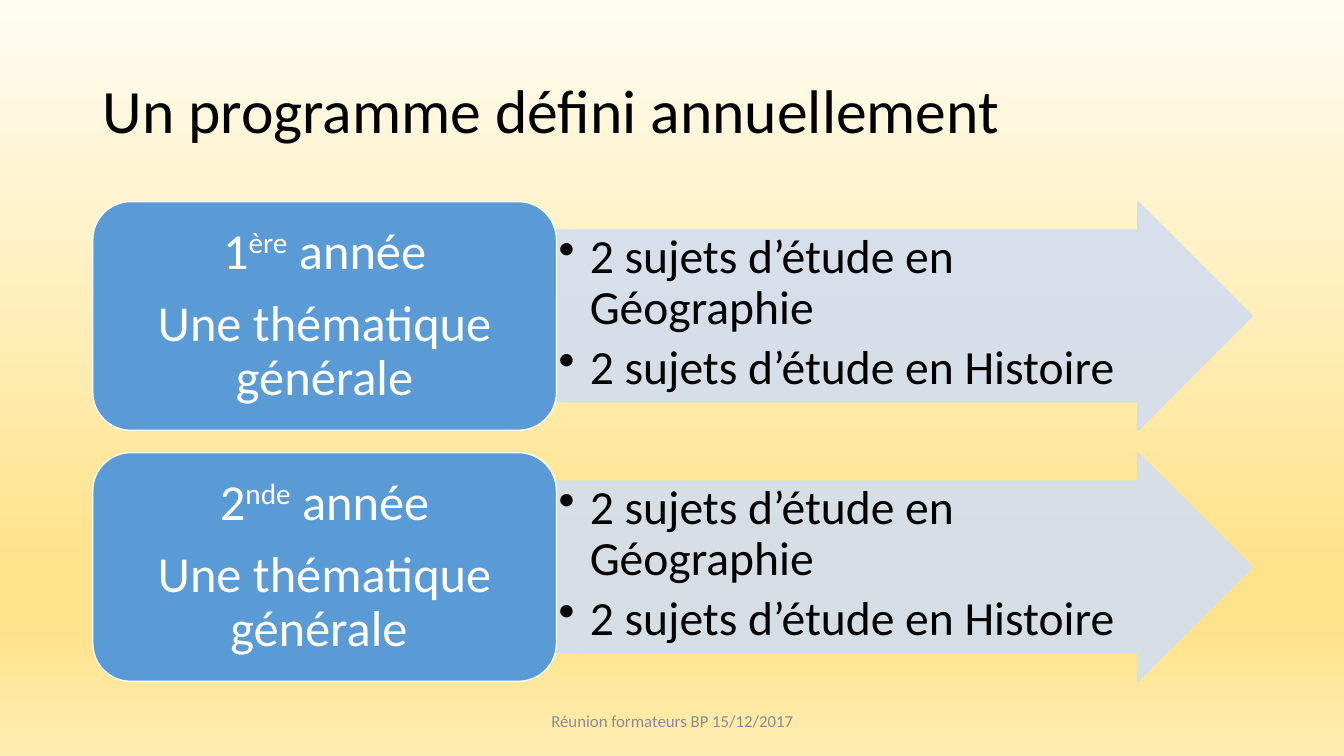
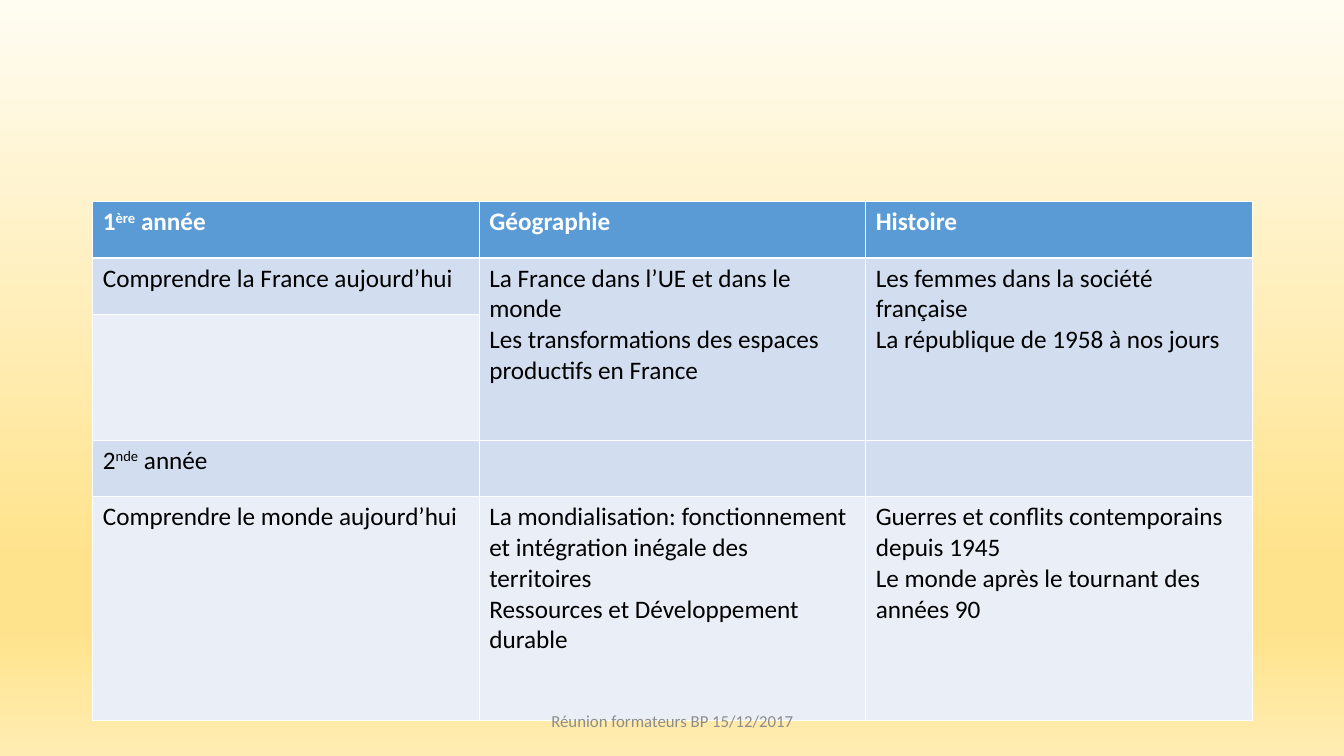
from lxml import etree
from pptx import Presentation
from pptx.dml.color import RGBColor
from pptx.enum.shapes import MSO_SHAPE
from pptx.enum.text import MSO_ANCHOR, PP_ALIGN
from pptx.oxml.ns import qn
from pptx.util import Inches, Pt

BLACK = RGBColor(0x00, 0x00, 0x00)
WHITE = RGBColor(0xFF, 0xFF, 0xFF)
BLUE = RGBColor(0x5B, 0x9B, 0xD5)
PALE = RGBColor(0xD2, 0xDE, 0xEF)
LIGHT = RGBColor(0xEA, 0xEF, 0xF7)
GRAY = RGBColor(0x8C, 0x8C, 0x8C)
STOPS = [(0, "FFFCF2"), (74, "FFE38C"), (83, "FFE38C"), (100, "FFECB2")]

FONT = "Calibri"
CENTER, LEFT = PP_ALIGN.CENTER, PP_ALIGN.LEFT
MIDDLE, TOP = MSO_ANCHOR.MIDDLE, MSO_ANCHOR.TOP
ARROW, ROUND = MSO_SHAPE.RIGHT_ARROW, MSO_SHAPE.ROUNDED_RECTANGLE
EDGE, HEAD, WIDE = 0.92, 2, 11.5


def write(frame, lines, font, para, bullet=False):
    """Fill a text frame; text between ^ marks is superscript."""
    for i, line in enumerate(lines):
        p = frame.add_paragraph() if i else frame.paragraphs[0]
        for name, value in para.items():
            setattr(p, name, value)
        if bullet:
            props = p._p.get_or_add_pPr()
            props.set("marL", str(Inches(0.31)))
            props.set("indent", str(-Inches(0.31)))
            etree.SubElement(props, qn("a:buChar")).set("char", "•")
        for k, part in enumerate(line.split("^")):
            run = p.add_run()
            run.text = part
            run.font.name = FONT
            run.font.size = Pt(font["size"])
            run.font.bold = font.get("bold", False)
            run.font.color.rgb = font["color"]
            if k % 2:
                run._r.get_or_add_rPr().set("baseline", "30000")


def label(slide, place, text, font, para):
    box = slide.shapes.add_textbox(*map(Inches, place))
    box.text_frame.word_wrap = True
    box.text_frame.vertical_anchor = MIDDLE
    write(box.text_frame, [text], font, para)


prs = Presentation()
prs.slide_width, prs.slide_height = Inches(13.33), Inches(7.5)

# Shared background
master = prs.slide_master
fill = master.background.fill
fill.gradient()
fill.gradient_angle = 270
ramp = master.element.find(".//" + qn("a:gsLst"))
for stop in list(ramp):
    ramp.remove(stop)
for pos, color in STOPS:
    stop = etree.SubElement(ramp, qn("a:gs"), pos=str(pos * 1000))
    etree.SubElement(stop, qn("a:srgbClr"), val=color)

blank = prs.slide_layouts[6]
plan, grid = [prs.slides.add_slide(blank) for _ in range(2)]

# Slide 1: one box and one arrow per year
label(plan, (EDGE, 0.4, WIDE, 1.45), "Un programme défini annuellement",
      {"size": 44, "color": BLACK}, {"line_spacing": 0.9})

THEMES = [["1^ère^ année", "Une thématique générale"],
          ["2^nde^ année", "Une thématique générale "]]
TOPICS = ["2 sujets d’étude en Géographie", "2 sujets d’étude en Histoire"]
BOX_W, BOX_H, STEP = 4.6, 2.27, 2.49

for i, theme in enumerate(THEMES):
    parts = [
        {"kind": ARROW, "left": EDGE + BOX_W, "width": WIDE - BOX_W,
         "fill": PALE, "line": PALE, "alpha": 90, "adj": [0.75, 0.5],
         "pad": (0.02, 0.02), "anchor": TOP, "lines": TOPICS,
         "font": {"size": 34, "color": BLACK}, "align": LEFT, "after": 6},
        {"kind": ROUND, "left": EDGE, "width": BOX_W,
         "fill": BLUE, "line": WHITE, "alpha": 100, "adj": [0.1667],
         "pad": (0.15, 0.07), "anchor": MIDDLE, "lines": theme,
         "font": {"size": 36, "color": WHITE}, "align": CENTER, "after": 12.5},
    ]
    for part in parts:
        shape = plan.shapes.add_shape(
            part["kind"], Inches(part["left"]), Inches(HEAD + i * STEP),
            Inches(part["width"]), Inches(BOX_H))
        shape.shadow.inherit = False
        for k, value in enumerate(part["adj"]):
            shape.adjustments[k] = value
        shape.fill.solid()
        shape.fill.fore_color.rgb = part["fill"]
        shape.line.color.rgb = part["line"]
        shape.line.width = Pt(1)
        if part["alpha"] < 100:
            for tone in shape._element.spPr.iter(qn("a:srgbClr")):
                etree.SubElement(tone, qn("a:alpha"), val=str(part["alpha"] * 1000))
        frame = shape.text_frame
        frame.word_wrap = True
        frame.vertical_anchor = part["anchor"]
        frame.margin_left = frame.margin_right = Inches(part["pad"][0])
        frame.margin_top = frame.margin_bottom = Inches(part["pad"][1])
        para = {"alignment": part["align"], "line_spacing": 0.9,
                "space_after": Pt(part["after"])}
        write(frame, part["lines"], part["font"], para, part["kind"] == ARROW)

# Slide 2: programme table
ROWS = [
    (0.56, BLUE, [["1^ère^ année"], ["Géographie"], ["Histoire"]]),
    (0.56, PALE, [
        ["Comprendre la France aujourd’hui"],
        ["La France dans l’UE et dans le monde",
         "Les transformations des espaces productifs en France"],
        ["Les femmes dans la société française",
         "La république de 1958 à nos jours"]]),
    (1.25, LIGHT, [[], [], []]),
    (0.56, PALE, [["2^nde^ année"], [], []]),
    (2.22, LIGHT, [
        ["Comprendre le monde aujourd’hui"],
        ["La mondialisation: fonctionnement et intégration inégale des territoires",
         "Ressources et Développement durable"],
        ["Guerres et conflits contemporains depuis 1945",
         "Le monde après le tournant des années 90"]]),
]
tall = sum(row[0] for row in ROWS)
table = grid.shapes.add_table(
    len(ROWS), 3, Inches(EDGE), Inches(HEAD), Inches(WIDE), Inches(tall)).table
for r, (height, color, cells) in enumerate(ROWS):
    table.rows[r].height = Inches(height)
    font = {"size": 18, "color": BLACK if r else WHITE, "bold": r == 0}
    for c, lines in enumerate(cells):
        cell = table.cell(r, c)
        cell.fill.solid()
        cell.fill.fore_color.rgb = color
        write(cell.text_frame, lines, font, {"alignment": LEFT})
for c in (1, 2):
    table.cell(1, c).merge(table.cell(2, c))

# Shared footer
for slide in prs.slides:
    label(slide, (4.42, 6.95, 4.5, 0.4), "Réunion formateurs BP 15/12/2017",
          {"size": 12, "color": GRAY}, {"alignment": CENTER})

prs.save("out.pptx")
